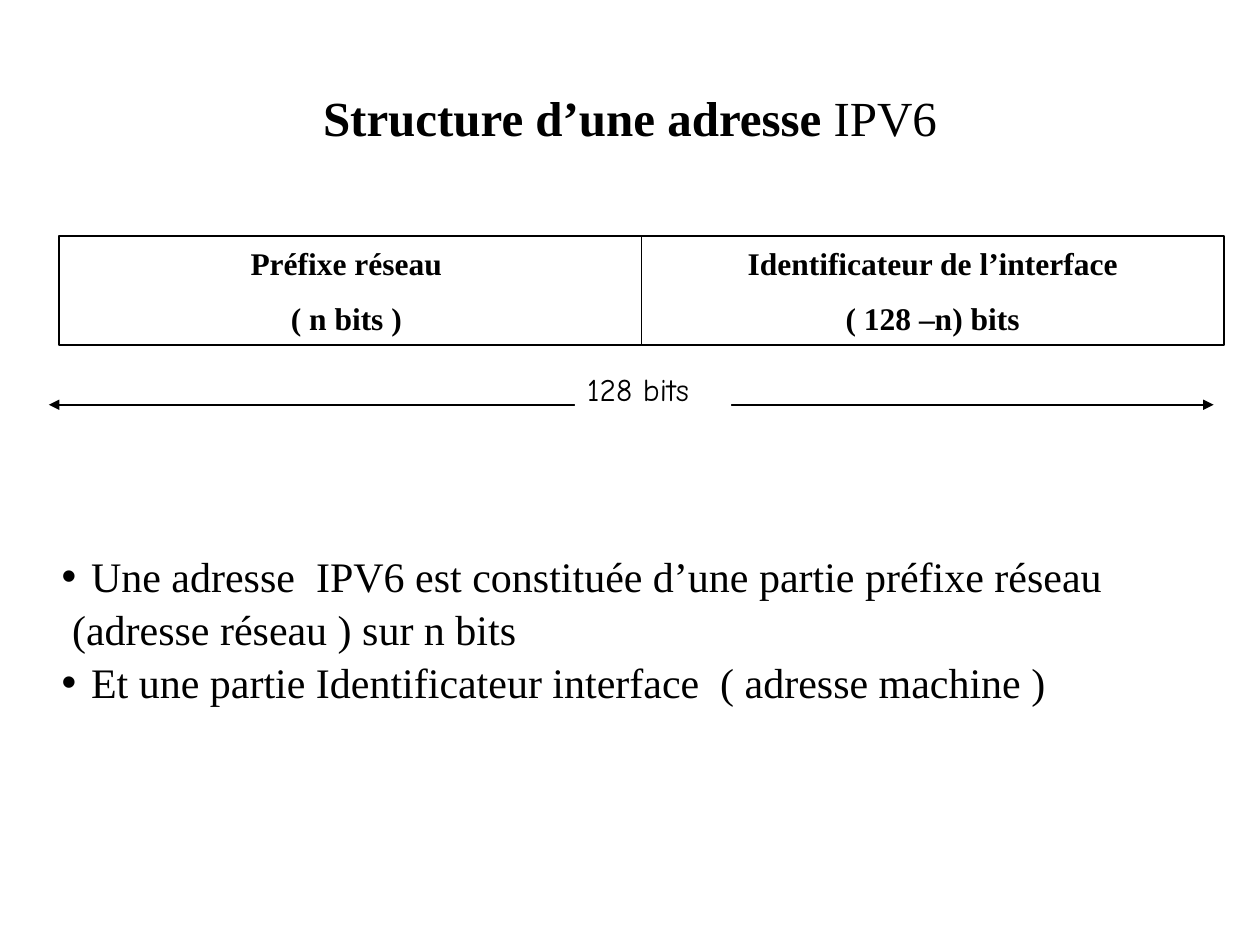
from pptx import Presentation
from pptx.dml.color import RGBColor
from pptx.enum import shapes, text
from pptx.oxml.ns import qn
from pptx.util import Pt
from lxml import etree


def color(value):
    return RGBColor.from_string(value)


class SlideBuilder:
    """Hold the style and the current slide, and draw each kind of element."""

    serif = "Times New Roman"
    hand = "Comic Neue"
    ink = "000000"
    paper = "FFFFFF"
    line_width = 1
    bullet_indent = 16.8

    def __init__(self, slide):
        self.slide = slide

    def place(self, shape, left, top, width, height):
        shape.left, shape.top = Pt(left), Pt(top)
        shape.width, shape.height = Pt(width), Pt(height)

    def add_run(self, paragraph, content, size, bold=False, font=serif):
        run = paragraph.add_run()
        run.text = content
        run.font.name = font
        run.font.size = Pt(size)
        run.font.bold = bold
        run.font.color.rgb = color(self.ink)

    def paragraphs(self, frame, lines):
        for index, line in enumerate(lines):
            paragraph = frame.add_paragraph() if index else frame.paragraphs[0]
            yield paragraph, line

    def title(self, runs, box):
        shape = self.slide.shapes.title
        self.place(shape, *box)
        frame = shape.text_frame
        frame.auto_size = text.MSO_AUTO_SIZE.NONE
        frame.vertical_anchor = text.MSO_ANCHOR.MIDDLE
        paragraph = frame.paragraphs[0]
        paragraph.alignment = text.PP_ALIGN.CENTER
        for content, bold in runs:
            self.add_run(paragraph, content, 28, bold)

    def body(self, lines, box):
        shape = self.slide.placeholders[1]
        self.place(shape, *box)
        frame = shape.text_frame
        frame.auto_size = text.MSO_AUTO_SIZE.NONE
        frame.word_wrap = False
        for paragraph, (content, bulleted) in self.paragraphs(frame, lines):
            paragraph.line_spacing = 1.05
            paragraph.space_before = Pt(0)
            properties = paragraph._p.get_or_add_pPr()
            indent = Pt(self.bullet_indent) if bulleted else 0
            properties.set("marL", str(indent))
            properties.set("indent", str(-indent))
            if bulleted:
                etree.SubElement(properties, qn("a:buChar")).set("char", "•")
            else:
                etree.SubElement(properties, qn("a:buNone"))
            self.add_run(paragraph, content, 24)

    def rectangle(self, box):
        shape = self.slide.shapes.add_shape(
            shapes.MSO_SHAPE.RECTANGLE, *(Pt(length) for length in box))
        shape.shadow.inherit = False
        shape.fill.solid()
        shape.fill.fore_color.rgb = color(self.paper)
        return shape

    def field(self, lines, box):
        shape = self.rectangle(box)
        shape.line.color.rgb = color(self.ink)
        shape.line.width = Pt(self.line_width)
        frame = shape.text_frame
        frame.word_wrap = True
        frame.vertical_anchor = text.MSO_ANCHOR.MIDDLE
        for paragraph, content in self.paragraphs(frame, lines):
            paragraph.alignment = text.PP_ALIGN.CENTER
            paragraph.space_before = Pt(9.6)
            self.add_run(paragraph, content, 18, True)

    def label(self, content, box):
        shape = self.rectangle(box)
        shape.line.fill.background()
        frame = shape.text_frame
        frame.word_wrap = False
        frame.vertical_anchor = text.MSO_ANCHOR.TOP
        paragraph = frame.paragraphs[0]
        paragraph.alignment = text.PP_ALIGN.LEFT
        self.add_run(paragraph, content, 18, font=self.hand)

    def double_arrow(self, left, right, top):
        arrow = self.slide.shapes.add_connector(
            shapes.MSO_CONNECTOR.STRAIGHT, Pt(left), Pt(top), Pt(right), Pt(top))
        arrow.line.color.rgb = color(self.ink)
        arrow.line.width = Pt(self.line_width)
        outline = arrow.line._get_or_add_ln()
        for end in ("a:headEnd", "a:tailEnd"):
            etree.SubElement(outline, qn(end)).set("type", "triangle")
        etree.SubElement(arrow._element.spPr, qn("a:effectLst"))


def main():
    presentation = Presentation()
    presentation.slide_width, presentation.slide_height = Pt(720), Pt(540)
    layout = presentation.slide_layouts[1]
    builder = SlideBuilder(presentation.slides.add_slide(layout))

    builder.title([("Structure d’une adresse ", True), ("IPV6", False)],
                  (36, 21.6, 648, 90))

    fields = [("Préfixe réseau ", "( n bits ) "),
              ("Identificateur de l’interface", " ( 128 –n) bits ")]
    field_width = 332.8
    for index, lines in enumerate(fields):
        builder.field(lines, (33.8 + index * field_width, 135, field_width, 62))

    builder.double_arrow(28, 693.5, 231.3)
    builder.label("128 bits", (328.5, 208, 89.3, 50.4))

    builder.body([
        ("Une adresse  IPV6 est constituée d’une partie préfixe réseau", True),
        (" (adresse réseau ) sur n bits", False),
        ("Et une partie Identificateur interface  ( adresse machine )", True),
    ], (28, 309.6, 613.5, 94.3))

    presentation.save("out.pptx")


if __name__ == "__main__":
    main()
